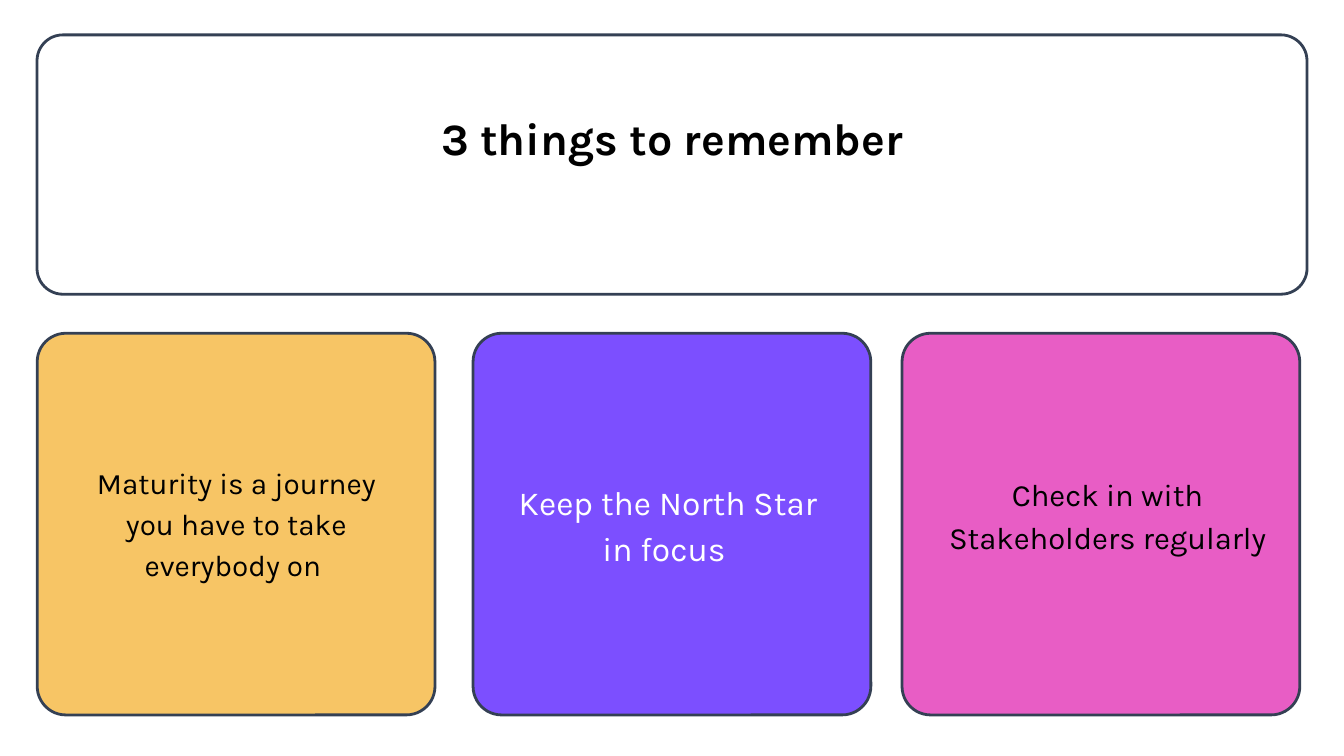
"""Build a slide with a heading panel above three coloured reminder cards."""
from lxml import etree
from pptx import Presentation
from pptx.dml.color import RGBColor
from pptx.enum.shapes import MSO_SHAPE
from pptx.enum.text import MSO_ANCHOR, MSO_AUTO_SIZE, PP_ALIGN
from pptx.oxml.ns import qn
from pptx.util import Inches, Pt

ROUNDED = MSO_SHAPE.ROUNDED_RECTANGLE
TOP = MSO_ANCHOR.TOP
FIXED = MSO_AUTO_SIZE.NONE
CENTER = PP_ALIGN.CENTER

BLACK = RGBColor(0x00, 0x00, 0x00)
WHITE = RGBColor(0xFF, 0xFF, 0xFF)
SLATE = RGBColor(0x34, 0x40, 0x54)
AMBER = RGBColor(0xF7, 0xC5, 0x65)
VIOLET = RGBColor(0x7C, 0x4F, 0xFF)
PINK = RGBColor(0xE8, 0x5D, 0xC5)

FONT = "Karla"
COLUMN = ROW = Inches(0.1)
COLUMNS, ROWS = 100, 56.25
CARD_TOP, CARD_WIDTH, CARD_HEIGHT = 24.8, 29.6, 28.4
MESSAGE_WIDTH = 26.4

deck = Presentation()
deck.slide_width = int(COLUMNS * COLUMN)
deck.slide_height = int(ROWS * ROW)
slide = deck.slides.add_slide(deck.slide_layouts.get_by_name("Comparison"))
heading, *messages, spare = slide.placeholders
spare.element.getparent().remove(spare.element)


def grid_box(left, top, width, height):
    return int(left * COLUMN), int(top * ROW), int(width * COLUMN), int(height * ROW)


def write(holder, text, *, box, size, color=BLACK, bold=False, spacing=1.0):
    holder.left, holder.top, holder.width, holder.height = grid_box(*box)
    holder.element.getparent().append(holder.element)
    frame = holder.text_frame
    frame.word_wrap = True
    frame.auto_size = FIXED
    frame.vertical_anchor = TOP
    frame.margin_left = frame.margin_right = Inches(0.1)
    frame.margin_top = frame.margin_bottom = Inches(0.1)
    frame.text = text
    paragraph = frame.paragraphs[0]
    properties = paragraph._p.get_or_add_pPr()
    properties.set("marL", "0")
    properties.set("indent", "0")
    etree.SubElement(properties, qn("a:buNone"))
    paragraph.alignment = CENTER
    paragraph.line_spacing = spacing
    paragraph.space_before = Pt(0)
    font = paragraph.runs[0].font
    font.name, font.size, font.bold = FONT, Pt(size), bold
    font.color.rgb = color


panels = [
    ((2.75, 2.6, 94.5, 19.3), 0.1, WHITE),
    *[((left, CARD_TOP, CARD_WIDTH, CARD_HEIGHT), 0.075, fill)
      for left, fill in ((2.77, AMBER), (35.2, VIOLET), (67.12, PINK))],
]
for box, rounding, fill in panels:
    panel = slide.shapes.add_shape(ROUNDED, *grid_box(*box))
    panel.adjustments[0] = rounding
    panel.shadow.inherit = False
    panel.fill.solid()
    panel.fill.fore_color.rgb = fill
    panel.line.color.rgb = SLATE
    panel.line.width = Pt(1.5)

write(heading, "3 things to remember", box=(14.75, 7.2, 70.5, 6.1), size=24, bold=True)

reminders = [
    ("Maturity is a journey you have to take everybody on ", 4.4, 33.2, 10.9, 15.9, BLACK),
    ("Keep the North Star in focus ", 36.5, 34.4, 9.2, 18, WHITE),
    ("Check in with Stakeholders regularly", 69.2, 34, 9.2, 16.6, BLACK),
]
for message, (text, left, top, height, size, color) in zip(messages, reminders):
    write(message, text, box=(left, top, MESSAGE_WIDTH, height),
          size=size, color=color, spacing=1.15)

deck.save("out.pptx")
